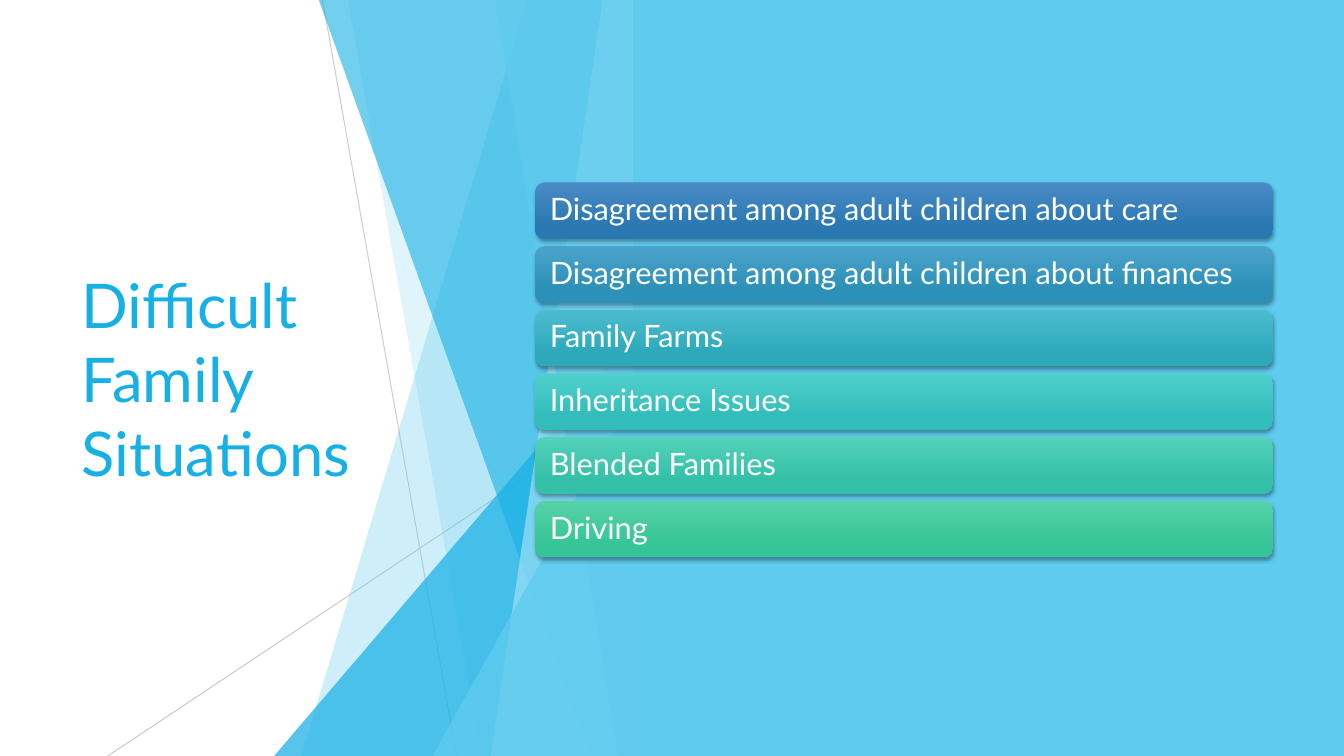
import pptx
import pptx.dml.color
import pptx.enum.shapes
import pptx.enum.text
import pptx.oxml
import pptx.oxml.ns
import pptx.oxml.xmlchemy
import pptx.shapes.base
import pptx.slide
import pptx.util
from dataclasses import dataclass

Pt = pptx.util.Pt
RGBColor = pptx.dml.color.RGBColor
SHAPE = pptx.enum.shapes.MSO_SHAPE

SKY = RGBColor(0x5F, 0xCB, 0xEF)
AZURE = RGBColor(0x17, 0xB0, 0xE4)
PALE_SKY = RGBColor(0x9F, 0xE0, 0xF5)
SILVER = RGBColor(0xBF, 0xBF, 0xBF)
WHITE = RGBColor(0xFF, 0xFF, 0xFF)

FONT = "Lato"
SLIDE_WIDTH, SLIDE_HEIGHT = 960, 540
SEAM = 452.2
FACET_TOP = -0.6
BAR_LEFT, BAR_TOP, BAR_WIDTH, BAR_HEIGHT, BAR_STEP = 382.3, 130.3, 527, 40.3, 45.5


@dataclass(frozen=True)
class Ray:
    start: tuple[float, float]
    end: tuple[float, float]
    opacity: int


@dataclass(frozen=True)
class Facet:
    top_x: float
    bottom_x: float
    color: RGBColor
    opacity: int


@dataclass(frozen=True)
class Peak:
    left: float
    top: float
    color: RGBColor
    opacity: int


@dataclass(frozen=True)
class Situation:
    label: str
    light: RGBColor
    deep: RGBColor


RAYS = [
    Ray((230.4, 0), (326.2, SLIDE_HEIGHT), 75),
    Ray((SEAM, 290.2), (77, SLIDE_HEIGHT), 80),
]

CRYSTAL = [
    Facet(376.6, 215.3, SKY, 30),
    Facet(248.4, 344.2, SKY, 20),
    Peak(195.8, 239.8, AZURE, 72),
    Facet(227.5, 421.9, AZURE, 60),
    Facet(430.6, 350.6, PALE_SKY, 70),
    Facet(353.5, 441.4, SKY, 65),
    Peak(308.9, 283, SKY, 80),
]

SITUATIONS = [
    Situation("Disagreement among adult children about care",
              RGBColor(0x4A, 0x8B, 0xC6), RGBColor(0x2A, 0x78, 0xB2)),
    Situation("Disagreement among adult children about finances",
              RGBColor(0x4B, 0xA3, 0xCB), RGBColor(0x2C, 0x90, 0xB7)),
    Situation("Family Farms",
              RGBColor(0x4C, 0xBC, 0xCF), RGBColor(0x2D, 0xA9, 0xBB)),
    Situation("Inheritance Issues",
              RGBColor(0x4F, 0xD0, 0xCD), RGBColor(0x32, 0xBD, 0xBA)),
    Situation("Blended Families",
              RGBColor(0x53, 0xD1, 0xB9), RGBColor(0x34, 0xC0, 0xA8)),
    Situation("Driving",
              RGBColor(0x56, 0xD2, 0xA7), RGBColor(0x36, 0xC5, 0x96)),
]


def set_opacity(shape: pptx.shapes.base.BaseShape, percent: int) -> None:
    for color in shape.element.spPr.iter(pptx.oxml.ns.qn("a:srgbClr")):
        alpha = pptx.oxml.xmlchemy.OxmlElement("a:alpha")
        alpha.set("val", str(percent * 1000))
        color.append(alpha)


def paint(shape: pptx.shapes.base.BaseShape, color: RGBColor, opacity: int = 100) -> None:
    shape.shadow.inherit = False
    shape.line.fill.background()
    shape.fill.solid()
    shape.fill.fore_color.rgb = color
    if opacity < 100:
        set_opacity(shape, opacity)


def draw_ray(slide: pptx.slide.Slide, ray: Ray) -> None:
    line = slide.shapes.add_connector(
        pptx.enum.shapes.MSO_CONNECTOR.STRAIGHT,
        *(Pt(length) for length in ray.start + ray.end))
    line.line.color.rgb = SILVER
    line.line.width = Pt(0.75)
    set_opacity(line, ray.opacity)
    line.element.spPr.append(pptx.oxml.xmlchemy.OxmlElement("a:effectLst"))


def draw_facet(slide: pptx.slide.Slide, facet: Facet) -> None:
    outline = slide.shapes.build_freeform(Pt(facet.top_x), Pt(FACET_TOP))
    corners = [(SEAM, FACET_TOP), (SEAM, SLIDE_HEIGHT), (facet.bottom_x, SLIDE_HEIGHT)]
    outline.add_line_segments([(Pt(x), Pt(y)) for x, y in corners], close=True)
    paint(outline.convert_to_shape(), facet.color, facet.opacity)


def draw_peak(slide: pptx.slide.Slide, peak: Peak) -> None:
    triangle = slide.shapes.add_shape(
        SHAPE.ISOSCELES_TRIANGLE, Pt(peak.left), Pt(peak.top),
        Pt(SEAM - peak.left), Pt(SLIDE_HEIGHT - peak.top))
    triangle.adjustments[0] = 1
    paint(triangle, peak.color, peak.opacity)


def add_bar_shadow(bar: pptx.shapes.base.BaseShape) -> None:
    bar.shadow.inherit = False
    effects = bar.element.spPr.find(pptx.oxml.ns.qn("a:effectLst"))
    effects.append(pptx.oxml.parse_xml(
        f'<a:outerShdw {pptx.oxml.ns.nsdecls("a")} blurRad="{Pt(3)}" dist="{Pt(2)}" '
        'dir="5400000" rotWithShape="0"><a:srgbClr val="000000">'
        '<a:alpha val="35000"/></a:srgbClr></a:outerShdw>'))


def draw_situation(slide: pptx.slide.Slide, row: int, situation: Situation) -> None:
    bar = slide.shapes.add_shape(
        SHAPE.ROUNDED_RECTANGLE, Pt(BAR_LEFT), Pt(BAR_TOP + row * BAR_STEP),
        Pt(BAR_WIDTH), Pt(BAR_HEIGHT))
    bar.line.fill.background()
    bar.fill.gradient()
    bar.fill.gradient_angle = 270
    stops = bar.fill.gradient_stops
    for stop, position, color in zip(stops, (0, 0.78), (situation.light, situation.deep)):
        stop.position = position
        stop.color.rgb = color
    add_bar_shadow(bar)

    frame = bar.text_frame
    frame.text = situation.label
    frame.word_wrap = True
    frame.vertical_anchor = pptx.enum.text.MSO_ANCHOR.MIDDLE
    frame.margin_left = frame.margin_right = Pt(8.5)
    frame.margin_top = frame.margin_bottom = Pt(6.5)
    paragraph = frame.paragraphs[0]
    paragraph.alignment = pptx.enum.text.PP_ALIGN.LEFT
    paragraph.line_spacing = 0.9
    style_run(paragraph.runs[0], 22, WHITE)


def style_run(run, size: float, color: RGBColor) -> None:
    run.font.name = FONT
    run.font.size = Pt(size)
    run.font.color.rgb = color


def write_title(slide: pptx.slide.Slide) -> None:
    title = slide.shapes.title
    title.left, title.top, title.width, title.height = Pt(51.1), Pt(108.7), Pt(279.4), Pt(322.6)
    frame = title.text_frame
    frame.text = "Difficult Family Situations"
    frame.word_wrap = True
    frame.auto_size = pptx.enum.text.MSO_AUTO_SIZE.NONE
    frame.vertical_anchor = pptx.enum.text.MSO_ANCHOR.MIDDLE
    paragraph = frame.paragraphs[0]
    paragraph.alignment = pptx.enum.text.PP_ALIGN.LEFT
    style_run(paragraph.runs[0], 44, AZURE)


def main() -> None:
    deck = pptx.Presentation()
    deck.slide_width, deck.slide_height = Pt(SLIDE_WIDTH), Pt(SLIDE_HEIGHT)
    slide = deck.slides.add_slide(deck.slide_layouts.get_by_name("Title Only"))
    slide.background.fill.solid()
    slide.background.fill.fore_color.rgb = WHITE

    write_title(slide)
    for ray in RAYS:
        draw_ray(slide, ray)
    for piece in CRYSTAL:
        if isinstance(piece, Peak):
            draw_peak(slide, piece)
        else:
            draw_facet(slide, piece)
    panel = slide.shapes.add_shape(
        SHAPE.RECTANGLE, Pt(SEAM), Pt(0), Pt(SLIDE_WIDTH - SEAM), Pt(SLIDE_HEIGHT))
    paint(panel, SKY)
    for row, situation in enumerate(SITUATIONS):
        draw_situation(slide, row, situation)

    deck.save("out.pptx")


if __name__ == "__main__":
    main()
